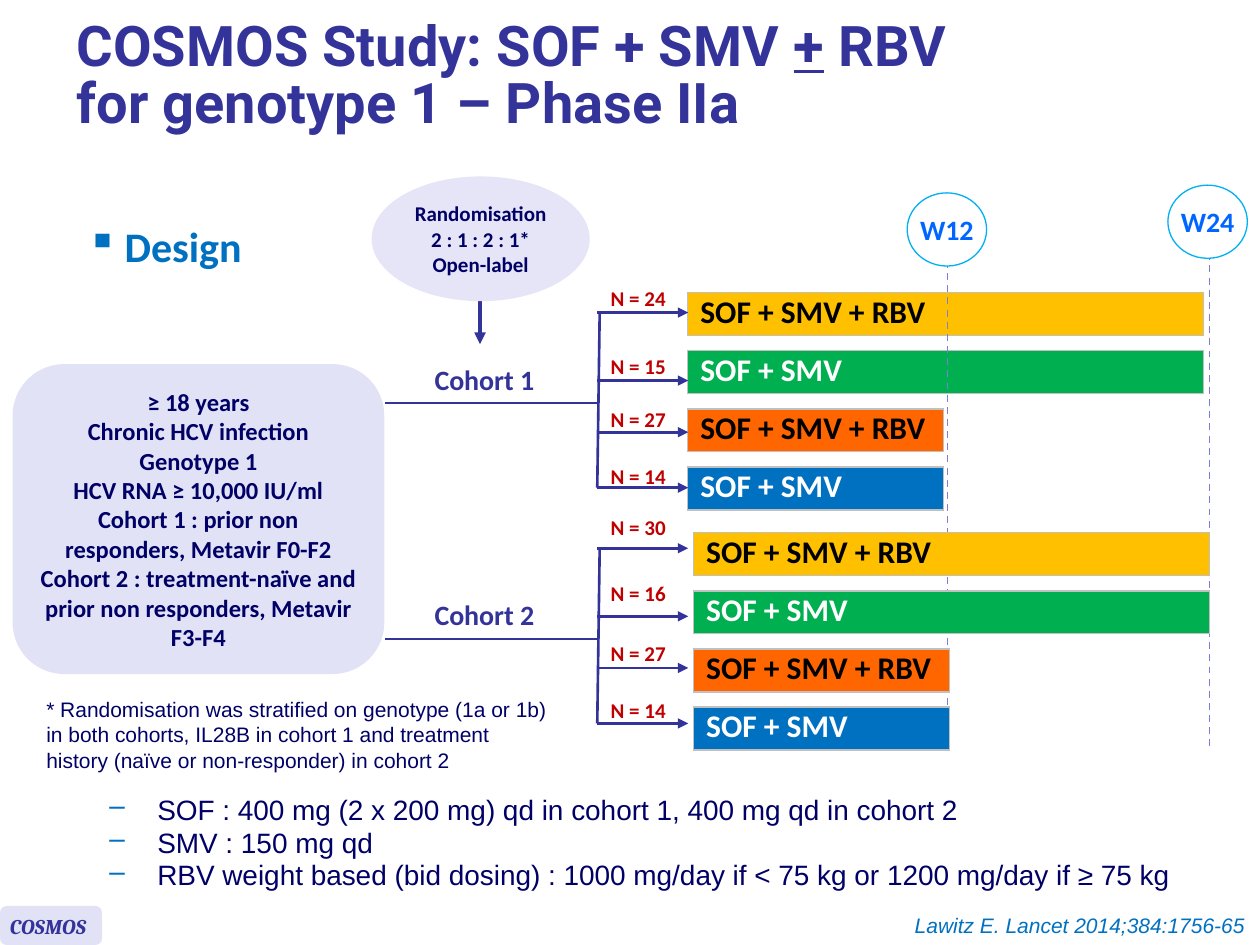
from dataclasses import dataclass
from typing import Optional

from lxml.etree import SubElement
from pptx import Presentation
from pptx.dml.color import RGBColor
from pptx.enum.dml import MSO_LINE_DASH_STYLE as Dash
from pptx.enum.shapes import MSO_CONNECTOR, MSO_SHAPE as Preset
from pptx.enum.text import MSO_ANCHOR as Anchor, PP_ALIGN as Align
from pptx.oxml.ns import qn
from pptx.util import Pt

INDIGO, NAVY, BLUE, RED = "333399", "000066", "0070C0", "C00000"
LAVENDER, BLACK, WHITE = "E2E2F6", "000000", "FFFFFF"
STEM_X, ARROW_END = 341.3, 393.3
BAR_PITCH, BAR_HEIGHT = 33.2, 24.2
BRANCH_OFFSETS = (0, 38.9, 68.4, 100.1)
STEM_OFFSET = 51.8


@dataclass(frozen=True)
class Style:
    size: float
    color: str
    font: str = "Calibri"
    bold: bool = True
    italic: bool = False
    align: Align = Align.LEFT


@dataclass(frozen=True)
class Arm:
    text: str
    fill: str
    ink: str
    width: float


@dataclass(frozen=True)
class Cohort:
    name: str
    name_top: float
    branch_top: float
    bar_left: float
    bar_top: float
    counts: tuple[int, ...]
    count_tops: tuple[float, ...]


ARMS = (
    Arm("SOF + SMV + RBV", "FFC000", BLACK, 294.7),
    Arm("SOF + SMV", "00B050", WHITE, 294.7),
    Arm("SOF + SMV + RBV", "FF6600", BLACK, 146.2),
    Arm("SOF + SMV", BLUE, WHITE, 146.2),
)
COHORTS = (
    Cohort("Cohort 1", 203.8, 178.6, 393, 167.2, (24, 15, 27, 14), (159.8, 198.7, 229, 261.4)),
    Cohort("Cohort 2", 337.7, 313.3, 396.3, 304.4, (30, 16, 27, 14), (290.2, 328.3, 362.2, 395.3)),
)
COUNT_STYLE = Style(12, RED, align=Align.CENTER)


def rgb(value: str) -> RGBColor:
    return RGBColor.from_string(value)


def style_paragraph(para, style: Style) -> None:
    para.alignment = style.align
    for span in para.runs:
        font = span.font
        font.name, font.size = style.font, Pt(style.size)
        font.bold, font.italic = style.bold, style.italic
        font.color.rgb = rgb(style.color)


def write(frame, text: str, style: Style, wrap: bool = True) -> None:
    frame.text = text
    frame.word_wrap = wrap
    for para in frame.paragraphs:
        style_paragraph(para, style)


def add_text(page, left, top, width, height, text: str, style: Style, wrap: bool = True):
    box = page.shapes.add_textbox(Pt(left), Pt(top), Pt(width), Pt(height))
    write(box.text_frame, text, style, wrap)
    return box


def add_panel(page, preset, left, top, width, height, fill: str, line: Optional[str] = None):
    panel = page.shapes.add_shape(preset, Pt(left), Pt(top), Pt(width), Pt(height))
    panel.shadow.inherit = False
    panel.fill.solid()
    panel.fill.fore_color.rgb = rgb(fill)
    if line:
        panel.line.color.rgb = rgb(line)
        panel.line.width = Pt(0.75)
    else:
        panel.line.fill.background()
    panel.text_frame.vertical_anchor = Anchor.MIDDLE
    return panel


def add_line(page, x1, y1, x2, y2, color: str = INDIGO, width: float = 1.5,
             arrow: bool = False, dashed: bool = False) -> None:
    link = page.shapes.add_connector(MSO_CONNECTOR.STRAIGHT, Pt(x1), Pt(y1), Pt(x2), Pt(y2))
    link.line.color.rgb = rgb(color)
    link.line.width = Pt(width)
    if dashed:
        link.line.dash_style = Dash.DASH
    properties = link.element.spPr
    if arrow:
        SubElement(properties.find(qn("a:ln")), qn("a:tailEnd"), type="triangle")
    SubElement(properties, qn("a:effectLst"))


def add_bullet(para, symbol: str, color: str, margin: float, hanging: float) -> None:
    properties = para._p.get_or_add_pPr()
    properties.set("marL", str(Pt(margin)))
    properties.set("indent", str(-Pt(hanging)))
    bullet_color = SubElement(properties, qn("a:buClr"))
    SubElement(bullet_color, qn("a:srgbClr"), val=color)
    SubElement(properties, qn("a:buChar"), char=symbol)


def add_bar(page, left: float, top: float, arm: Arm) -> None:
    """Draw a treatment arm as a one-cell table."""
    table = page.shapes.add_table(1, 1, Pt(left), Pt(top), Pt(arm.width), Pt(BAR_HEIGHT)).table
    table.first_row = table.horz_banding = False
    cell = table.cell(0, 0)
    write(cell.text_frame, arm.text, Style(18, arm.ink))
    cell.text_frame.paragraphs[0].line_spacing = 0.8
    cell.vertical_anchor = Anchor.MIDDLE
    properties = cell._tc.get_or_add_tcPr()
    for side in ("lnL", "lnR", "lnT", "lnB"):
        border = SubElement(properties, qn(f"a:{side}"), w=str(Pt(1)))
        fill = SubElement(border, qn("a:solidFill"))
        SubElement(fill, qn("a:srgbClr"), val="C0C0C0")
    cell.fill.solid()
    cell.fill.fore_color.rgb = rgb(arm.fill)


def add_bars(page, cohort: Cohort) -> None:
    for row, arm in enumerate(ARMS):
        add_bar(page, cohort.bar_left, cohort.bar_top + row * BAR_PITCH, arm)


def add_branches(page, cohort: Cohort) -> None:
    top = cohort.branch_top
    stem_y = top + STEM_OFFSET
    add_line(page, 220, stem_y, STEM_X, stem_y)
    add_line(page, STEM_X + 1.4, top, STEM_X, top + BRANCH_OFFSETS[-1])
    for offset, count, count_top in zip(BRANCH_OFFSETS, cohort.counts, cohort.count_tops):
        add_line(page, STEM_X, top + offset, ARROW_END, top + offset, arrow=True)
        add_text(page, STEM_X, count_top, 46.8, 21.6, f"N = {count}", COUNT_STYLE, wrap=False)
    add_text(page, 241.2, cohort.name_top, 72.7, 26.6, cohort.name, Style(16, INDIGO), wrap=False)


def add_week(page, text: str, left: float, top: float, line_x: float) -> None:
    add_line(page, line_x, top + 32, line_x, 428.4, "7E7ED4", 1, dashed=True)
    marker = add_panel(page, Preset.OVAL, left, top, 45.4, 41.8, WHITE, "00B0F0")
    write(marker.text_frame, text, Style(16, "0066FF", align=Align.CENTER), wrap=False)


def add_title(page) -> None:
    box = add_text(page, 36.7, 5.8, 657.4, 77, "", Style(32, INDIGO))
    box.text_frame.vertical_anchor = Anchor.MIDDLE
    para = box.text_frame.paragraphs[0]
    para.line_spacing = 0.85
    for text in ("COSMOS Study: SOF + SMV ", "+", " RBV"):
        span = para.add_run()
        span.text = text
        span.font.underline = text == "+"
    para.add_line_break()
    para.add_run().text = "for genotype 1 – Phase IIa"
    style_paragraph(para, Style(32, INDIGO, "Roboto"))


def add_population(page) -> None:
    panel = add_panel(page, Preset.ROUNDED_RECTANGLE, 7.2, 208.1, 212.4, 177.1, LAVENDER)
    write(panel.text_frame, "≥ 18 years\nChronic HCV infection\nGenotype 1\n"
          "HCV RNA ≥ 10,000 IU/ml\nCohort 1 : prior non\nresponders, Metavir F0-F2\n"
          "Cohort 2 : treatment-naïve and prior non responders, Metavir F3-F4",
          Style(14, NAVY, align=Align.CENTER))


def add_randomisation(page) -> None:
    add_line(page, 274.3, 170.6, 274.3, 196.6, width=2.25, arrow=True)
    oval = add_panel(page, Preset.OVAL, 212.4, 100.8, 124.6, 71.3, "E5E5F7")
    frame = oval.text_frame
    frame.margin_left = frame.margin_right = frame.margin_top = frame.margin_bottom = 0
    write(frame, "Randomisation\n2 : 1 : 2 : 1*\nOpen-label",
          Style(12, NAVY, align=Align.CENTER), wrap=False)


def add_notes_and_dosing(page) -> None:
    add_text(page, 19.4, 394.6, 304.6, 51.1, "* Randomisation was stratified on genotype (1a or 1b) "
             "in both cohorts, IL28B in cohort 1 and treatment history (naïve or non-responder) "
             "in cohort 2", Style(12, NAVY, "Arial", bold=False))
    design = add_text(page, 42.5, 122.4, 147.6, 39.6, "Design", Style(24, BLUE))
    add_bullet(design.text_frame.paragraphs[0], "▪", BLUE, 21.6, 21.6)
    dosing = add_text(page, 19.4, 450, 691.9, 64.8,
                      "SOF : 400 mg (2 x 200 mg) qd in cohort 1, 400 mg qd in cohort 2\n"
                      "SMV : 150 mg qd\nRBV weight based (bid dosing) : "
                      "1000 mg/day if < 75 kg or 1200 mg/day if ≥ 75 kg",
                      Style(16, NAVY, "Arial", bold=False))
    for para in dosing.text_frame.paragraphs:
        add_bullet(para, "–", BLUE, 63.4, 27.4)
        para.line_spacing = Pt(18.6)


def add_footer(page) -> None:
    add_panel(page, Preset.ROUNDED_RECTANGLE, 0, 517.7, 58.3, 22.3, LAVENDER)
    add_text(page, -1.4, 518.4, 63.4, 21.6, "COSMOS", Style(12, INDIGO, "Cambria", italic=True))
    add_text(page, 481, 517.7, 237.6, 21.6, "Lawitz E. Lancet 2014;384:1756-65",
             Style(12, BLUE, "Arial", bold=False, italic=True, align=Align.RIGHT))


def main() -> None:
    deck = Presentation()
    deck.slide_width, deck.slide_height = Pt(720), Pt(540)
    page = deck.slides.add_slide(deck.slide_layouts[6])
    first, second = COHORTS
    add_footer(page)
    add_title(page)
    add_randomisation(page)
    add_bars(page, first)
    add_week(page, "W12", 518.4, 110.2, 541.4)
    add_week(page, "W24", 667.4, 105.8, 691.2)
    add_bars(page, second)
    add_population(page)
    add_notes_and_dosing(page)
    for cohort in COHORTS:
        add_branches(page, cohort)
    deck.save("out.pptx")


if __name__ == "__main__":
    main()
